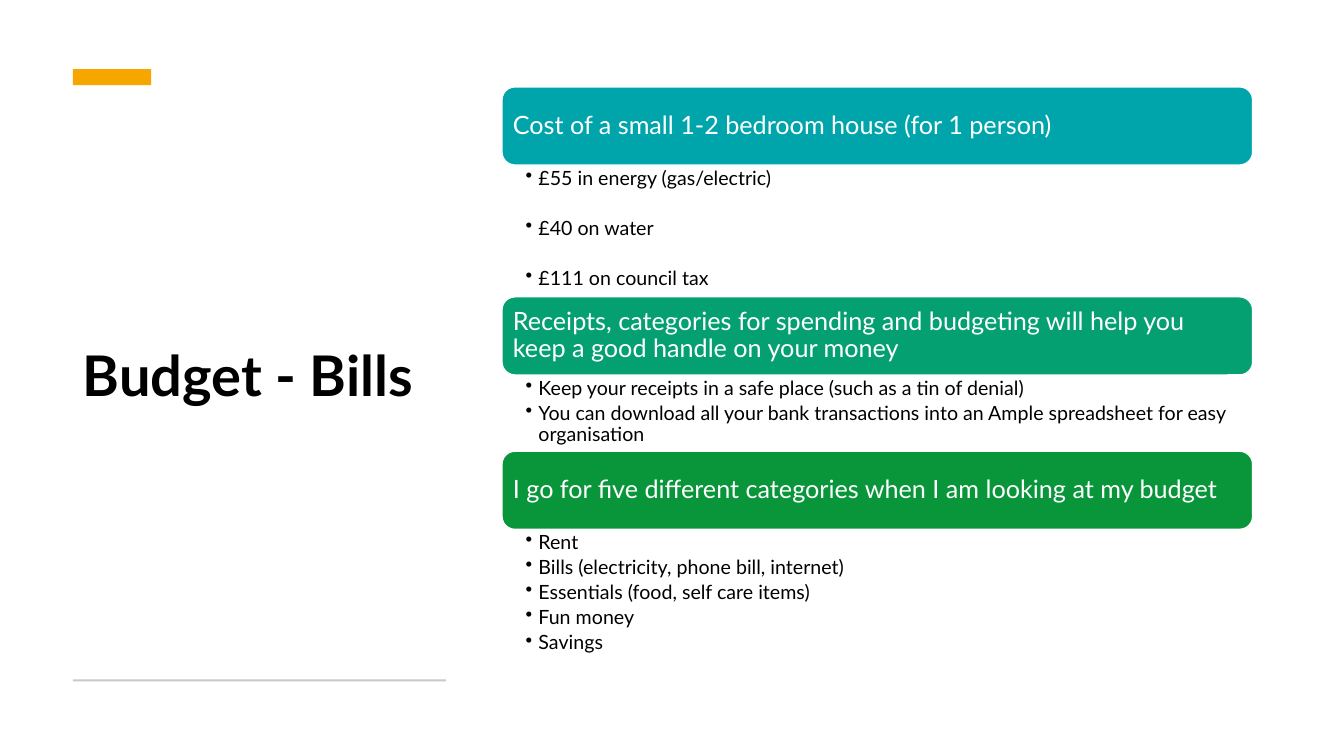
import dataclasses

import pptx
import pptx.dml.color
import pptx.enum.shapes
import pptx.enum.text
import pptx.oxml
import pptx.oxml.ns
import pptx.util

Cm = pptx.util.Cm
Pt = pptx.util.Pt
SHAPES = pptx.enum.shapes.MSO_SHAPE
ANCHOR = pptx.enum.text.MSO_ANCHOR
ALIGN = pptx.enum.text.PP_ALIGN


@dataclasses.dataclass(frozen=True)
class Theme:
    """Colours, font and type sizes of the slide."""
    font: str = "Lato"
    text: str = "000000"
    light: str = "FFFFFF"
    accent: str = "F5A700"
    rule: str = "C9C9C9"
    banners: tuple = ("00A5AB", "05A071", "09963B")
    title_size: int = 40
    banner_size: int = 18
    bullet_size: int = 14
    line_spacing: float = 0.9


@dataclasses.dataclass(frozen=True)
class Topic:
    """A banner heading with its bullets, in centimetres and points."""
    heading: str
    bullets: tuple
    body_height: float
    gap: float = 2.8


THEME = Theme()
BANNER_HEIGHT = 1.97
TOPICS = (
    Topic("Cost of a small 1-2 bedroom house (for 1 person)",
          ("£55 in energy (gas/electric)", "£40 on water", "£111 on council tax"),
          3.32, gap=20.7),
    Topic("Receipts, categories for spending and budgeting will help you "
          "keep a good handle on your money",
          ("Keep your receipts in a safe place (such as a tin of denial)",
           "You can download all your bank transactions into an Ample "
           "spreadsheet for easy organisation"),
          1.92),
    Topic("I go for five different categories when I am looking at my budget",
          ("Rent", "Bills (electricity, phone bill, internet)",
           "Essentials (food, self care items)", "Fun money", "Savings"),
          3.32),
)


def rgb(value):
    """Turn a hex string into a colour."""
    return pptx.dml.color.RGBColor.from_string(value)


def add_block(slide, kind, box, color):
    """Add a plain filled shape without line or shadow."""
    shape = slide.shapes.add_shape(kind, *map(Cm, box))
    shape.shadow.inherit = False
    shape.fill.solid()
    shape.fill.fore_color.rgb = rgb(color)
    shape.line.fill.background()
    return shape


def set_text(shape, lines, size, color, margins, anchor, bold=False):
    """Fill a shape with one formatted paragraph per line."""
    frame = shape.text_frame
    frame.word_wrap = True
    frame.vertical_anchor = anchor
    frame.margin_left, frame.margin_top, frame.margin_right, frame.margin_bottom = map(Cm, margins)
    frame.text = "\n".join(lines)
    for paragraph in frame.paragraphs:
        paragraph.alignment = ALIGN.LEFT
        paragraph.line_spacing = THEME.line_spacing
        for run in paragraph.runs:
            run.font.name = THEME.font
            run.font.size = Pt(size)
            run.font.bold = bold
            run.font.color.rgb = rgb(color)
    return frame.paragraphs


def add_bullet(paragraph):
    """Give a paragraph a hanging bullet."""
    properties = paragraph._p.get_or_add_pPr()
    properties.set("marL", str(Cm(0.32)))
    properties.set("indent", str(Cm(-0.32)))
    bullet = pptx.oxml.parse_xml(
        f'<a:buChar {pptx.oxml.ns.nsdecls("a")} char="•"/>')
    properties.append(bullet)


def add_title_panel(slide, left, top, width, height):
    """Place the accent bar, the title and the closing rule."""
    add_block(slide, SHAPES.RECTANGLE, (left, top, 1.97, 0.41), THEME.accent)
    title = slide.shapes.add_textbox(Cm(left), Cm(top + 0.93), Cm(width), Cm(height - 1.69))
    set_text(title, ["Budget - Bills"], THEME.title_size, THEME.text,
             (0.25, 0.13, 0.25, 0.13), ANCHOR.MIDDLE, bold=True)
    add_block(slide, SHAPES.RECTANGLE, (left, top + height - 0.05, width, 0.05), THEME.rule)


def add_topic(slide, topic, color, left, top, width):
    """Place a banner with its bullets and return the bottom edge."""
    banner = add_block(slide, SHAPES.ROUNDED_RECTANGLE, (left, top, width, BANNER_HEIGHT), color)
    banner.line.color.rgb = rgb(THEME.light)
    banner.line.width = Pt(1)
    set_text(banner, [topic.heading], THEME.banner_size, THEME.light, (0.18,) * 4, ANCHOR.MIDDLE)
    body_top = top + BANNER_HEIGHT
    body = slide.shapes.add_textbox(Cm(left), Cm(body_top), Cm(width), Cm(topic.body_height))
    paragraphs = set_text(body, topic.bullets, THEME.bullet_size, THEME.text,
                          (0.6, 0.08, 0.36, 0.08), ANCHOR.TOP)
    for paragraph in paragraphs:
        paragraph.space_after = Pt(topic.gap)
        add_bullet(paragraph)
    return body_top + topic.body_height


def add_topic_list(slide, left, top, width):
    """Stack the topics from top to bottom."""
    for topic, color in zip(TOPICS, THEME.banners):
        top = add_topic(slide, topic, color, left, top, width)


def main():
    """Build and save the presentation."""
    presentation = pptx.Presentation()
    presentation.slide_width = Cm(33.87)
    presentation.slide_height = Cm(19.05)
    slide = presentation.slides.add_slide(presentation.slide_layouts[6])
    add_title_panel(slide, 1.84, 1.74, 9.4, 15.43)
    add_topic_list(slide, 12.65, 2.19, 18.92)
    presentation.save("out.pptx")


if __name__ == "__main__":
    main()
